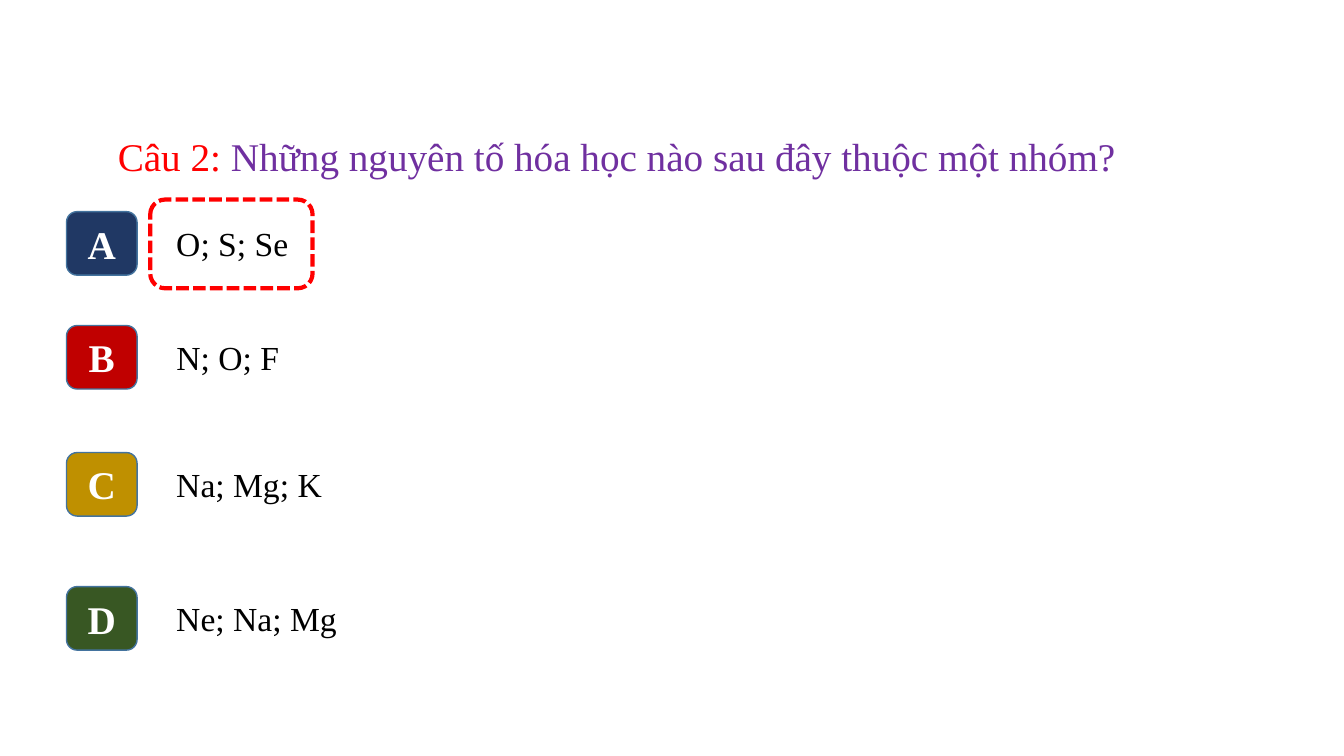
from pptx import Presentation
from pptx.dml.color import RGBColor
from pptx.enum.dml import MSO_LINE
from pptx.enum.shapes import MSO_SHAPE
from pptx.enum.text import MSO_ANCHOR, PP_ALIGN
from pptx.util import Inches, Pt

# Content
QUESTION = [
    ("Câu 2: ", "FF0000"),
    ("Những nguyên tố hóa học nào sau đây thuộc một nhóm?", "7030A0"),
]
# letter, badge colour, top of badge, answer, width of answer box
ANSWERS = [
    ("A", "203864", 2.1, "O; S; Se", 4.03),
    ("B", "C00000", 3.23, "N; O; F", 1.65),
    ("C", "BF9000", 4.49, "Na; Mg; K", 1.84),
    ("D", "385723", 5.82, "Ne; Na; Mg", 1.84),
]
FONT = "Times New Roman"
BADGE_LEFT, BADGE_W, BADGE_H = 0.66, 0.7, 0.63
ANSWER_LEFT, ANSWER_H = 1.65, 0.5
CORRECT_FRAME = (1.49, 1.98, 1.61, 0.88)


def color(hex_code):
    return RGBColor.from_string(hex_code)


def add_run(p, text, size, hex_code, bold=False):
    r = p.add_run()
    r.text = text
    r.font.name = FONT
    r.font.size = Pt(size)
    r.font.bold = bold
    r.font.color.rgb = color(hex_code)


def add_text(s, box, runs, size):
    tf = s.shapes.add_textbox(*map(Inches, box)).text_frame
    tf.word_wrap = True
    for text, hex_code in runs:
        add_run(tf.paragraphs[0], text, size, hex_code)


def add_rounded(s, box, line, width, fill=None):
    sp = s.shapes.add_shape(MSO_SHAPE.ROUNDED_RECTANGLE, *map(Inches, box))
    sp.shadow.inherit = False
    if fill:
        sp.fill.solid()
        sp.fill.fore_color.rgb = color(fill)
    else:
        sp.fill.background()
    sp.line.color.rgb = color(line)
    sp.line.width = Pt(width)
    return sp


def main():
    prs = Presentation()
    prs.slide_width, prs.slide_height = Inches(13.33), Inches(7.5)
    s = prs.slides.add_slide(prs.slide_layouts[6])

    # Question
    add_text(s, (1.07, 1.26, 11.66, 0.57), QUESTION, 28)

    # Lettered badges, each with its answer centred beside it
    for letter, fill, top, answer, width in ANSWERS:
        badge = add_rounded(s, (BADGE_LEFT, top, BADGE_W, BADGE_H), "43739E", 1, fill)
        tf = badge.text_frame
        tf.vertical_anchor = MSO_ANCHOR.MIDDLE
        p = tf.paragraphs[0]
        p.alignment = PP_ALIGN.CENTER
        add_run(p, letter, 28, "FFFFFF", bold=True)
        answer_top = top + (BADGE_H - ANSWER_H) / 2
        add_text(s, (ANSWER_LEFT, answer_top, width, ANSWER_H), [(answer, "000000")], 24)

    # Dashed frame around the correct answer
    frame = add_rounded(s, CORRECT_FRAME, "FF0000", 3)
    frame.line.dash_style = MSO_LINE.SQUARE_DOT

    prs.save("out.pptx")


if __name__ == "__main__":
    main()
